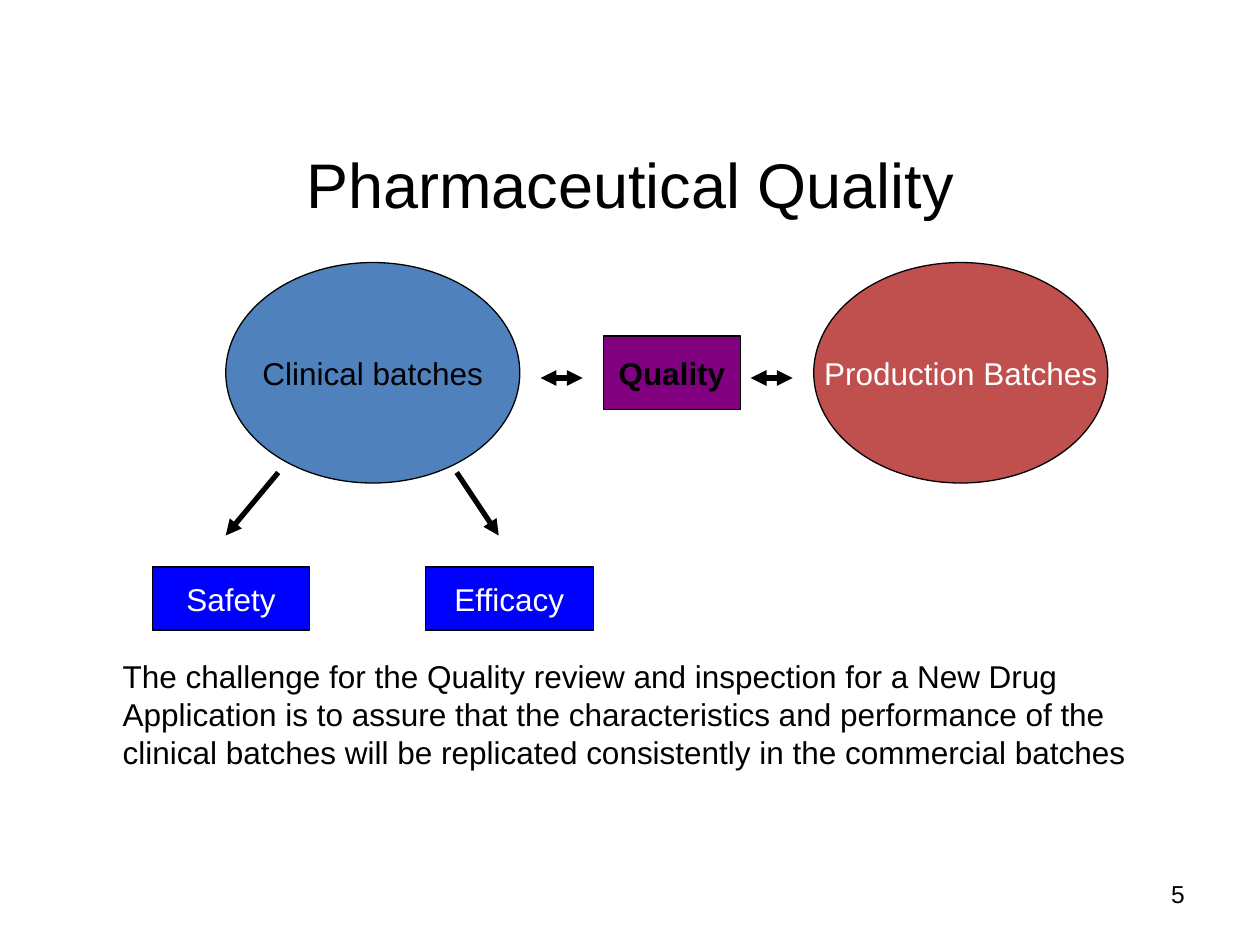
from dataclasses import dataclass

from lxml import etree
from pptx import Presentation
from pptx.dml.color import RGBColor
from pptx.enum.shapes import MSO_CONNECTOR, MSO_SHAPE
from pptx.enum.text import MSO_ANCHOR, PP_ALIGN
from pptx.oxml.ns import qn
from pptx.util import Emu, Pt

PX = 9525
OVAL, RECT = MSO_SHAPE.OVAL, MSO_SHAPE.RECTANGLE
STRAIGHT = MSO_CONNECTOR.STRAIGHT
TOP, MIDDLE = MSO_ANCHOR.TOP, MSO_ANCHOR.MIDDLE
LEFT, CENTER, RIGHT = PP_ALIGN.LEFT, PP_ALIGN.CENTER, PP_ALIGN.RIGHT


@dataclass(frozen=True)
class Theme:
    """Colours, font and type sizes of the slide."""
    black: str = "000000"
    white: str = "FFFFFF"
    clinical: str = "4F81BD"
    production: str = "C0504D"
    outcome: str = "0000FF"
    quality: str = "800080"
    font: str = "Arial"
    title: int = 36
    body: int = 18
    number: int = 14
    outline: float = 0.75
    arrow: int = 3


THEME = Theme()


def px(*lengths):
    """Turn pixel lengths into EMU."""
    return [Emu(length * PX) for length in lengths]


def apply(target, values):
    """Set each attribute named in a dict of format values."""
    for name, value in values.items():
        setattr(target, name, value)


def write(shape, text, size, align=CENTER, anchor=MIDDLE, wrap=True,
          color=THEME.black, bold=False):
    """Write one formatted paragraph into a shape."""
    frame = shape.text_frame
    apply(frame, {"word_wrap": wrap, "vertical_anchor": anchor})
    para = frame.paragraphs[0]
    para.alignment = align
    span = para.add_run()
    span.text = text
    apply(span.font, {"name": THEME.font, "size": Pt(size), "bold": bold})
    span.font.color.rgb = RGBColor.from_string(color)


def add_title(page, text, area):
    """Place and fill the title placeholder."""
    title = page.shapes.title
    apply(title, dict(zip(("left", "top", "width", "height"), px(*area))))
    write(title, text, THEME.title)


def add_text(page, text, area, size, align, anchor):
    """Add a wrapped text box."""
    box = page.shapes.add_textbox(*px(*area))
    write(box, text, size, align, anchor)
    return box


def add_node(page, kind, text, area, fill, color=THEME.white, bold=False):
    """Add an outlined shape with a centred label."""
    node = page.shapes.add_shape(kind, *px(*area))
    node.shadow.inherit = False
    node.fill.solid()
    node.fill.fore_color.rgb = RGBColor.from_string(fill)
    node.line.color.rgb = RGBColor.from_string(THEME.black)
    node.line.width = Pt(THEME.outline)
    write(node, text, THEME.body, wrap=False, color=color, bold=bold)


def add_arrow(page, ends, tips):
    """Add a straight line with triangle tips."""
    arrow = page.shapes.add_connector(STRAIGHT, *px(*ends))
    arrow.line.color.rgb = RGBColor.from_string(THEME.black)
    arrow.line.width = Pt(THEME.arrow)
    line = arrow.line._get_or_add_ln()
    for tip in tips:
        etree.SubElement(line, qn(f"a:{tip}"), type="triangle")
    etree.SubElement(arrow._element.spPr, qn("a:effectLst"))


def main():
    """Build the slide and save it."""
    deck = Presentation()
    deck.slide_width, deck.slide_height = px(960, 720)
    page = deck.slides.add_slide(deck.slide_layouts[5])

    add_title(page, "Pharmaceutical Quality", (72, 80, 816, 120))
    add_text(page, "5", (688, 656, 224, 50), THEME.number, RIGHT, MIDDLE)
    add_text(
        page,
        "The challenge for the Quality review and inspection for a New Drug "
        "Application is to assure that the characteristics and performance of "
        "the clinical batches will be replicated consistently in the "
        "commercial batches",
        (84, 496, 828, 104), THEME.body, LEFT, TOP)

    add_node(page, OVAL, "Clinical batches", (172, 200, 224, 168),
             THEME.clinical, THEME.black)
    add_node(page, OVAL, "Production Batches", (620, 200, 224, 168),
             THEME.production)
    add_node(page, RECT, "Safety", (116, 432, 120, 48), THEME.outcome)
    add_node(page, RECT, "Efficacy", (324, 432, 128, 48), THEME.outcome)
    add_node(page, RECT, "Quality", (460, 256, 104, 56), THEME.quality,
             THEME.black, True)

    for start, end in ((212, 172), (348, 380)):
        add_arrow(page, (start, 360, end, 408), ("tailEnd",))
    for start in (412, 572):
        add_arrow(page, (start, 288, start + 32, 288), ("headEnd", "tailEnd"))

    deck.save("out.pptx")


if __name__ == "__main__":
    main()
